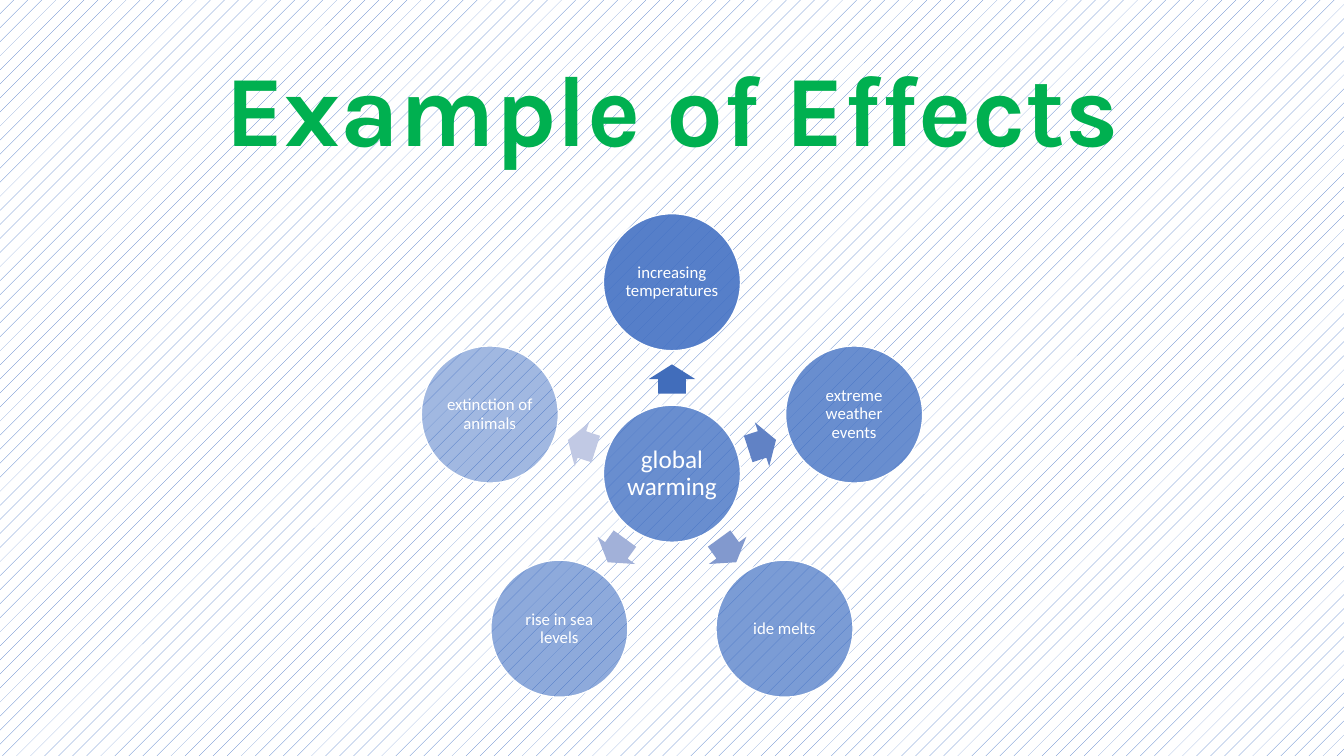
from math import cos, radians, sin

from lxml import etree
from pptx import Presentation
from pptx.dml.color import RGBColor
from pptx.enum.dml import MSO_PATTERN
from pptx.enum.shapes import MSO_SHAPE
from pptx.enum.text import MSO_ANCHOR, PP_ALIGN
from pptx.oxml.ns import qn
from pptx.util import Inches, Pt

BLUE = RGBColor(0x44, 0x72, 0xC4)
GREEN = RGBColor(0x00, 0xB0, 0x50)
WHITE = RGBColor(0xFF, 0xFF, 0xFF)

# Content: effect, opacity of its circle in percent, colour of its arrow
TITLE = "Example of Effects"
CAUSE = ("global warming", 80)
EFFECTS = [
    ("increasing temperatures", 90, RGBColor(0x41, 0x6D, 0xBB)),
    ("extreme weather events", 80, RGBColor(0x61, 0x82, 0xC5)),
    ("ide melts", 70, RGBColor(0x82, 0x99, 0xCE)),
    ("rise in sea levels", 60, RGBColor(0xA2, 0xB1, 0xD9)),
    ("extinction of animals", 50, RGBColor(0xC1, 0xC9, 0xE4)),
]

# Radial layout, in inches
WIDTH, HEIGHT = 13.333, 7.5
HUB = (WIDTH / 2, 4.7)
CIRCLE = 1.36
ARROW_LENGTH, ARROW_WIDTH = 0.29, 0.46
CIRCLE_ORBIT, ARROW_ORBIT = 1.9, 0.94


def around_hub(angle, distance):
    turn = radians(angle)
    return HUB[0] + distance * cos(turn), HUB[1] + distance * sin(turn)


def add_centred(page, kind, centre, width, height, colour):
    shape = page.shapes.add_shape(
        kind, Inches(centre[0] - width / 2), Inches(centre[1] - height / 2),
        Inches(width), Inches(height))
    shape.shadow.inherit = False
    shape.fill.solid()
    shape.fill.fore_color.rgb = colour
    return shape


def write(box, text, inset, **font):
    frame = box.text_frame
    frame.word_wrap = True
    frame.vertical_anchor = MSO_ANCHOR.MIDDLE
    for side in ("left", "right", "top", "bottom"):
        setattr(frame, f"margin_{side}", Inches(inset))
    para = frame.paragraphs[0]
    para.alignment = PP_ALIGN.CENTER
    para.line_spacing = 0.9
    span = para.add_run()
    span.text = text
    span.font.color.rgb = font.pop("colour")
    for name, value in font.items():
        setattr(span.font, name, value)


def add_circle(page, centre, text, opacity, size, inset):
    circle = add_centred(page, MSO_SHAPE.OVAL, centre, CIRCLE, CIRCLE, BLUE)
    tint = circle.fill._xPr.find(qn("a:solidFill"))[0]
    etree.SubElement(tint, qn("a:alpha"), val=str(opacity * 1000))
    circle.line.color.rgb = WHITE
    circle.line.width = Pt(1)
    write(circle, text, inset, size=Pt(size), name="Calibri", colour=WHITE)


def add_arrow(page, angle, colour):
    arrow = add_centred(page, MSO_SHAPE.RIGHT_ARROW, around_hub(angle, ARROW_ORBIT),
                        ARROW_LENGTH, ARROW_WIDTH, colour)
    arrow.adjustments[0], arrow.adjustments[1] = 0.6, 0.5
    arrow.rotation = angle % 360
    arrow.line.fill.background()


def main():
    deck = Presentation()
    deck.slide_width, deck.slide_height = Inches(WIDTH), Inches(HEIGHT)
    page = deck.slides.add_slide(deck.slide_layouts[6])

    # Patterned background
    backdrop = page.background.fill
    backdrop.patterned()
    backdrop.pattern = MSO_PATTERN.PERCENT_5
    backdrop.fore_color.rgb = BLUE
    backdrop.back_color.rgb = WHITE

    # Title
    heading = page.shapes.add_textbox(
        Inches(0.92), Inches(0.4), Inches(11.5), Inches(1.45))
    write(heading, TITLE, 0.05, size=Pt(72), name="Karla", bold=True, colour=GREEN)

    # Cause in the middle, effects clockwise from the top
    add_circle(page, HUB, *CAUSE, size=18, inset=0.03)
    for index, (effect, opacity, arrow_colour) in enumerate(EFFECTS):
        angle = index * 360 / len(EFFECTS) - 90
        add_arrow(page, angle, arrow_colour)
        add_circle(page, around_hub(angle, CIRCLE_ORBIT), effect, opacity,
                   size=12, inset=0.02)

    deck.save("out.pptx")


if __name__ == "__main__":
    main()
